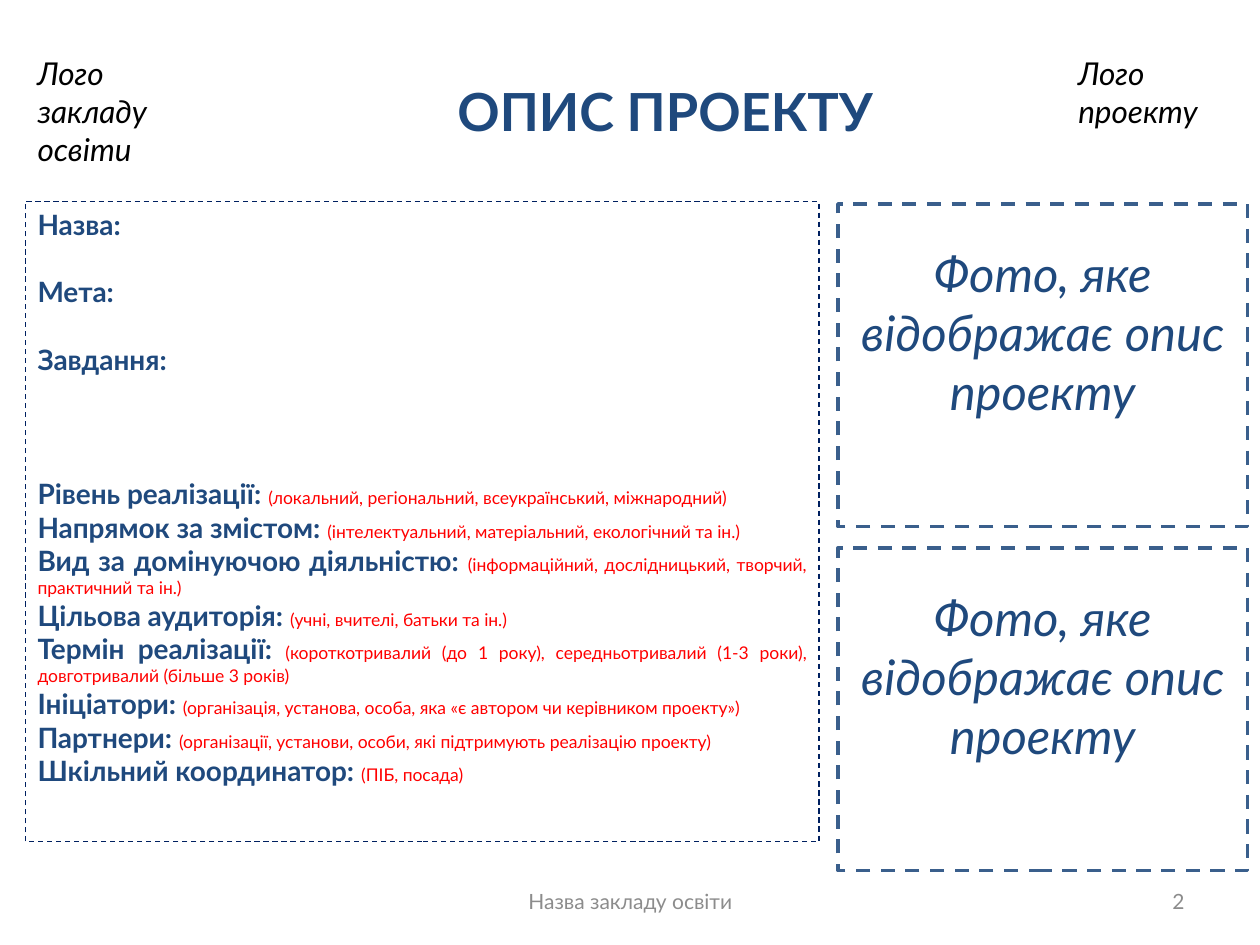
"""Build the project description slide with its form and two photo frames."""
from dataclasses import dataclass

from pptx import Presentation
from pptx.dml.color import RGBColor
from pptx.enum.dml import MSO_LINE_DASH_STYLE as Dash
from pptx.enum.shapes import MSO_SHAPE as Shape
from pptx.enum.text import MSO_ANCHOR as Anchor, PP_ALIGN as Align
from pptx.util import Pt

NAVY, RED, GREY, BLACK = "1F497D", "FF0000", "8C8C8C", "000000"
LABEL = {"size": Pt(16), "bold": True}
HINT = {"size": Pt(10), "bold": False}
HEADING = {"size": Pt(30), "bold": True}
LOGO = {"size": Pt(18), "italic": True}
PHOTO = {"size": Pt(28), "italic": True}
FOOTER = {"size": Pt(12)}
LINE_GAP = 19.2


@dataclass
class Box:
    left: float
    top: float
    width: float
    height: float


@dataclass
class Field:
    label: str
    hint: str = ""
    blank_lines: int = 0


@dataclass
class Caption:
    box: Box
    lines: list[str]
    style: dict
    color: str
    align: Align = Align.LEFT
    anchor: Anchor = Anchor.TOP


FIELDS = [
    Field("Назва:"),
    Field("Мета:", blank_lines=1),
    Field("Завдання:", blank_lines=1),
    Field("Рівень реалізації: ", "(локальний, регіональний, всеукраїнський, міжнародний)", 3),
    Field("Напрямок за змістом: ", "(інтелектуальний, матеріальний, екологічний та ін.)"),
    Field("Вид за домінуючою діяльністю: ",
          "(інформаційний, дослідницький, творчий, практичний та ін.)"),
    Field("Цільова аудиторія: ", "(учні, вчителі, батьки та ін.)"),
    Field("Термін реалізації: ",
          "(короткотривалий (до 1 року), середньотривалий (1-3 роки), "
          "довготривалий (більше 3 років)"),
    Field("Ініціатори: ", "(організація, установа, особа, яка «є автором чи керівником проекту»)"),
    Field("Партнери: ", "(організації, установи, особи, які підтримують реалізацію проекту)"),
    Field("Шкільний координатор: ", "(ПІБ, посада)"),
]

CAPTIONS = [
    Caption(Box(516.2, 500.4, 167.8, 28.8), ["2"], FOOTER, GREY, Align.RIGHT, Anchor.MIDDLE),
    Caption(Box(195.8, 41.8, 368.6, 43.9), ["ОПИС ПРОЕКТУ"], HEADING, NAVY, Align.CENTER),
    Caption(Box(246.2, 500.4, 228.2, 28.8), ["Назва закладу освіти"], FOOTER, GREY,
            Align.CENTER, Anchor.MIDDLE),
    Caption(Box(14.4, 27.4, 90.7, 72.7), ["Лого", "закладу освіти"], LOGO, BLACK),
    Caption(Box(609.1, 27.4, 90.7, 51.1), ["Лого", "проекту"], LOGO, BLACK),
]

FORM = Box(14.4, 115.2, 453.6, 365.8)
PHOTOS = [Box(478.8, top, 234, 184.3) for top in (116.6, 313.2)]
PHOTO_LINES = ["Фото, яке", "відображає опис проекту"]


def rgb(value: str) -> RGBColor:
    """Turn a hex string into a colour."""
    return RGBColor.from_string(value)


def place(box: Box) -> tuple:
    """Give the position and size of a box as lengths."""
    return Pt(box.left), Pt(box.top), Pt(box.width), Pt(box.height)


def add_run(paragraph, text: str, style: dict, color: str) -> None:
    """Add a formatted run to a paragraph."""
    run = paragraph.add_run()
    run.text = text
    for name, value in {"name": "Lato", **style}.items():
        setattr(run.font, name, value)
    run.font.color.rgb = rgb(color)


def add_paragraph(frame, index: int, align: Align):
    """Give the paragraph for a line, reusing the first one."""
    paragraph = frame.add_paragraph() if index else frame.paragraphs[0]
    paragraph.alignment = align
    return paragraph


def write_lines(frame, lines: list[str], style: dict, color: str, align: Align) -> None:
    """Write each line as its own paragraph."""
    for index, line in enumerate(lines):
        add_run(add_paragraph(frame, index, align), line, style, color)


def draw_caption(slide, caption: Caption) -> None:
    """Draw a plain text box."""
    frame = slide.shapes.add_textbox(*place(caption.box)).text_frame
    frame.word_wrap = True
    frame.vertical_anchor = caption.anchor
    write_lines(frame, caption.lines, caption.style, caption.color, caption.align)


def draw_frame(slide, box: Box, color: str, weight: float, anchor: Anchor, fill: str = ""):
    """Draw a dashed rectangle and return its text frame."""
    outline = slide.shapes.add_shape(Shape.RECTANGLE, *place(box))
    outline.shadow.inherit = False
    if fill:
        outline.fill.solid()
        outline.fill.fore_color.rgb = rgb(fill)
    else:
        outline.fill.background()
    outline.line.color.rgb = rgb(color)
    outline.line.width = Pt(weight)
    outline.line.dash_style = Dash.DASH
    outline.text_frame.word_wrap = True
    outline.text_frame.vertical_anchor = anchor
    return outline.text_frame


def draw_form(slide) -> None:
    """Draw the project form with labels and hints."""
    frame = draw_frame(slide, FORM, "002060", 0.75, Anchor.TOP)
    for index, field in enumerate(FIELDS):
        entry = add_paragraph(frame, index, Align.JUSTIFY)
        entry.space_before = Pt(field.blank_lines * LINE_GAP)
        add_run(entry, field.label, LABEL, NAVY)
        if field.hint:
            add_run(entry, field.hint, HINT, RED)


def draw_photo(slide, box: Box) -> None:
    """Draw a photo frame with its prompt set above the middle."""
    frame = draw_frame(slide, box, "3A5F8C", 2, Anchor.MIDDLE, "FFFFFF")
    frame.margin_bottom = Pt(42)
    write_lines(frame, PHOTO_LINES, PHOTO, NAVY, Align.CENTER)


def main() -> None:
    """Build and save the slide."""
    deck = Presentation()
    deck.slide_width, deck.slide_height = Pt(720), Pt(540)
    slide = deck.slides.add_slide(deck.slide_layouts[6])
    draw_form(slide)
    for caption in CAPTIONS:
        draw_caption(slide, caption)
    for photo in PHOTOS:
        draw_photo(slide, photo)
    deck.save("out.pptx")


if __name__ == "__main__":
    main()
